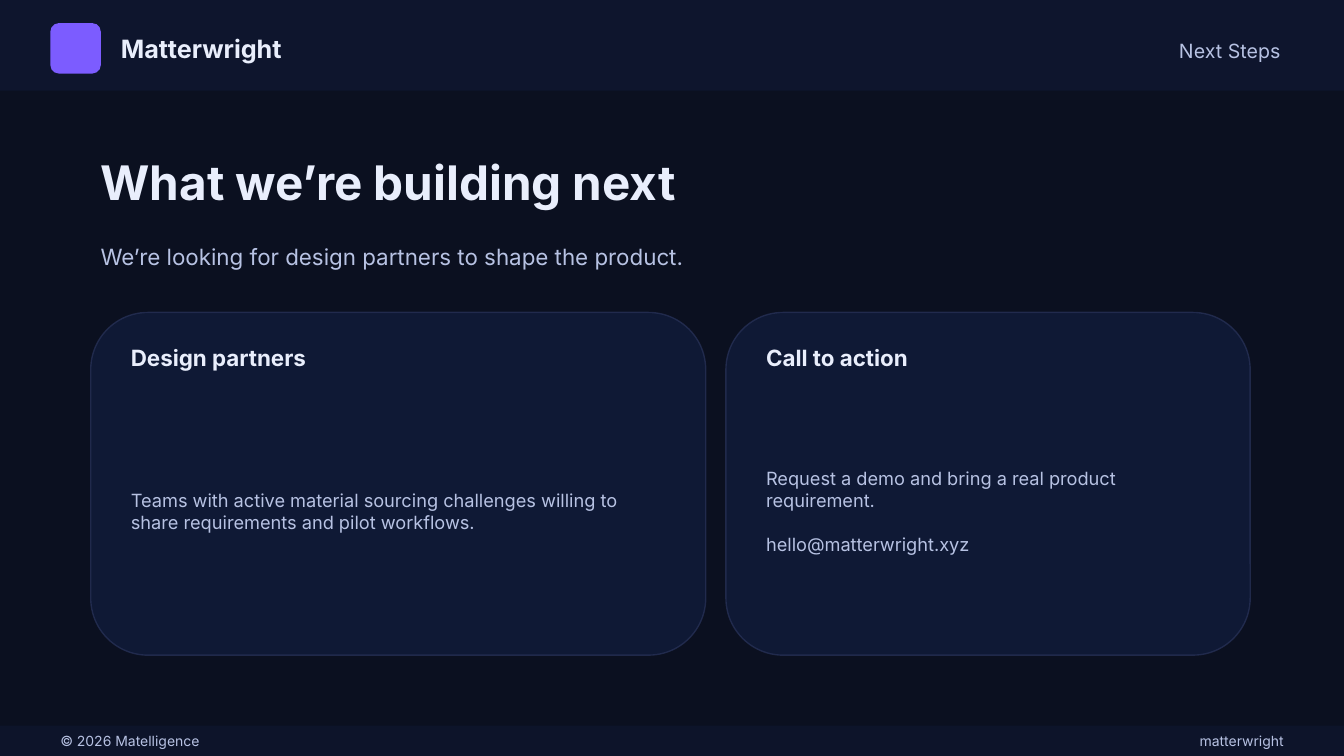
from lxml import etree
from pptx import Presentation
from pptx.dml.color import RGBColor
from pptx.enum.shapes import MSO_SHAPE
from pptx.enum.text import MSO_ANCHOR, PP_ALIGN
from pptx.oxml.ns import qn
from pptx.util import Inches, Pt

RECT, ROUND = MSO_SHAPE.RECTANGLE, MSO_SHAPE.ROUNDED_RECTANGLE
MIDDLE = MSO_ANCHOR.MIDDLE
LEFT, RIGHT = PP_ALIGN.LEFT, PP_ALIGN.RIGHT

WIDTH, HEIGHT = 13.33, 7.5
FONT = "Inter"
COLORS = {
    "background": "0B1020",
    "band": "0F1730",
    "accent": "7C5CFF",
    "card": "101A38",
    "border": "2A345B",
    "title": "E9EEFC",
    "muted": "B7C2E3",
}


def rgb(name):
    return RGBColor.from_string(COLORS[name])


def set_opacity(fill, percent):
    color = fill._xPr.find(qn("a:solidFill"))[0]
    etree.SubElement(color, qn("a:alpha"), val=str(percent * 1000))


class Deck:
    def __init__(self):
        self.prs = Presentation()
        self.prs.slide_width = Inches(WIDTH)
        self.prs.slide_height = Inches(HEIGHT)
        self.s = self.prs.slides.add_slide(self.prs.slide_layouts[6])
        fill = self.s.background.fill
        fill.solid()
        fill.fore_color.rgb = rgb("background")

    def shape(self, kind, x, y, w, h, color, opacity=100, border=None):
        sp = self.s.shapes.add_shape(kind, Inches(x), Inches(y), Inches(w), Inches(h))
        sp.shadow.inherit = False
        sp.fill.solid()
        sp.fill.fore_color.rgb = rgb(color)
        if opacity < 100:
            set_opacity(sp.fill, opacity)
        if border:
            sp.line.color.rgb = rgb(border)
            sp.line.width = Pt(1)
            set_opacity(sp.line.fill, 70)
        else:
            sp.line.fill.background()

    def text(self, x, y, w, h, paragraphs, size, color="muted", bold=False,
             align=LEFT, gap=0):
        """Add a text box; gap is the space in points between paragraphs."""
        sp = self.s.shapes.add_textbox(Inches(x), Inches(y), Inches(w), Inches(h))
        tf = sp.text_frame
        tf.word_wrap = True
        tf.vertical_anchor = MIDDLE
        for i, words in enumerate(paragraphs):
            p = tf.add_paragraph() if i else tf.paragraphs[0]
            p.text = words
            p.alignment = align
            if i:
                p.space_before = Pt(gap)
            p.font.name = FONT
            p.font.size = Pt(size)
            p.font.bold = bold
            p.font.color.rgb = rgb(color)

    def card(self, x, w, title, body):
        pad = 0.3
        self.shape(ROUND, x, 3.1, w, 3.4, "card", 90, "border")
        self.text(x + pad, 3.35, w - 2 * pad, 0.4, [title], 16, "title", True)
        self.text(x + pad, 3.82, w - 2 * pad, 2.5, body, 13, gap=15.7)


def main():
    deck = Deck()

    deck.shape(RECT, 0, 0, WIDTH, 0.9, "band", 85)
    deck.shape(ROUND, 0.5, 0.23, 0.5, 0.5, "accent")
    deck.text(1.1, 0.28, 6, 0.4, ["Matterwright"], 18, "title", True)
    deck.text(7.3, 0.3, 5.5, 0.4, ["Next Steps"], 14, align=RIGHT)

    deck.text(0.9, 1.4, 11.6, 0.8, ["What we’re building next"], 34, "title", True)
    deck.text(0.9, 2.25, 11.2, 0.6,
              ["We’re looking for design partners to shape the product."], 16)

    deck.card(0.9, 6.1, "Design partners", [
        "Teams with active material sourcing challenges willing to "
        "share requirements and pilot workflows."])
    deck.card(7.2, 5.2, "Call to action", [
        "Request a demo and bring a real product requirement.",
        "hello@matterwright.xyz"])

    deck.shape(RECT, 0, 7.2, WIDTH, 0.3, "band", 65)
    deck.text(0.5, 7.2, 6, 0.3, ["© 2026 Matelligence"], 10)
    deck.text(7, 7.2, 5.83, 0.3, ["matterwright"], 10, align=RIGHT)

    deck.prs.save("out.pptx")


if __name__ == "__main__":
    main()
